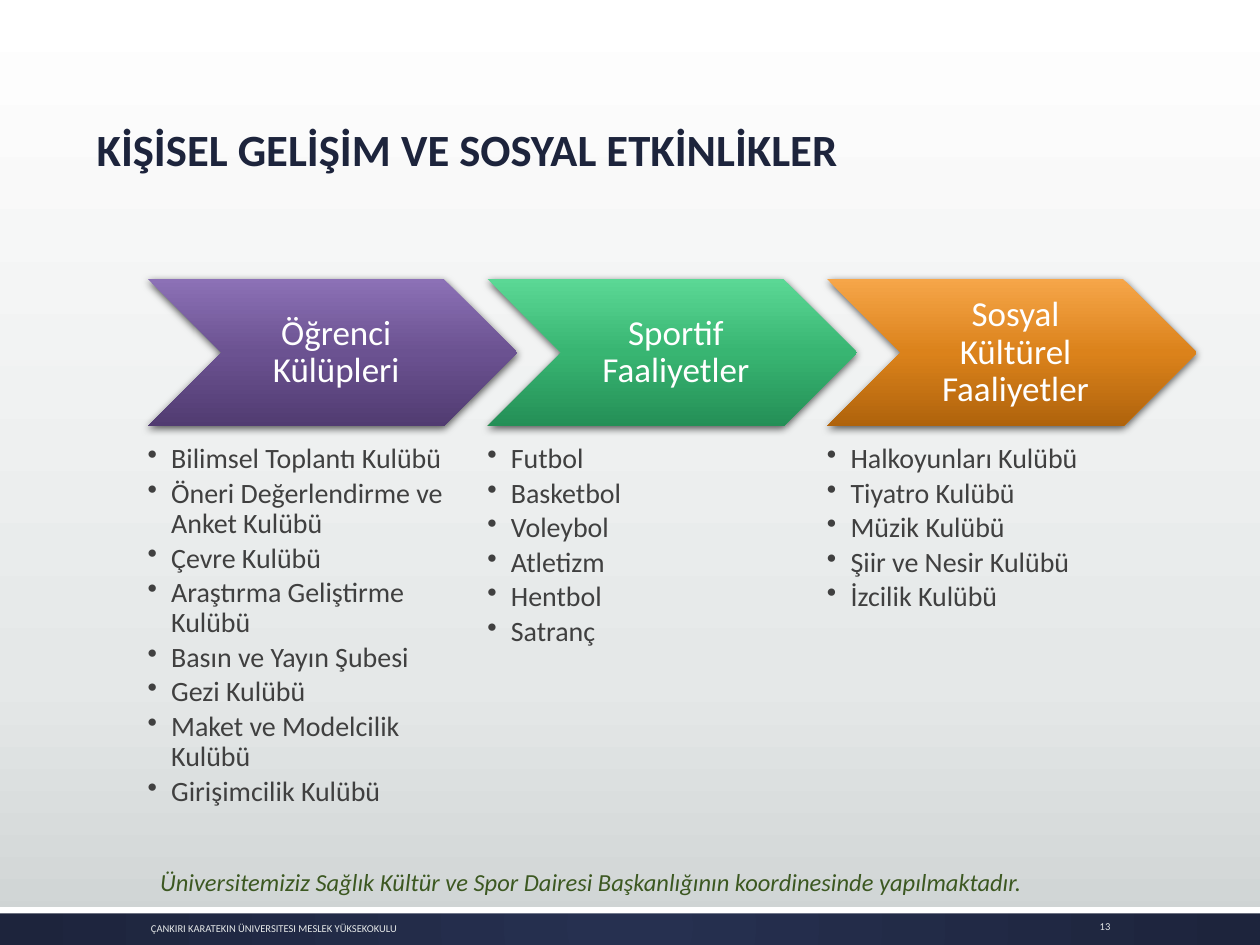
from dataclasses import dataclass

from lxml.etree import SubElement
from pptx import Presentation
from pptx.dml.color import RGBColor
from pptx.enum.shapes import MSO_SHAPE
from pptx.enum.text import MSO_ANCHOR, MSO_AUTO_SIZE, PP_ALIGN
from pptx.oxml import parse_xml
from pptx.oxml.ns import nsdecls, qn
from pptx.util import Pt

FONT = "Calibri"
COLORS = {
    "navy": "1D243C",
    "navy_light": "263050",
    "white": "FFFFFF",
    "pale": "E5E8E8",
    "gray": "CDD2D2",
    "body": "404040",
    "green": "3C5821",
}
LINEAR = '<a:lin ang="5400000" scaled="0"/>'
RADIAL = ('<a:path path="circle">'
          '<a:fillToRect l="50000" t="50000" r="50000" b="50000"/></a:path>')

COLUMN_LEFT, COLUMN_STEP = 84.4, 194.1
CHEVRON_TOP, CHEVRON_WIDTH, CHEVRON_HEIGHT = 159.3, 211.2, 84.4
LIST_TOP, LIST_WIDTH, LIST_HEIGHT = 254, 169, 217
BULLET_INDENT = 13.5


@dataclass
class Activity:
    heading: str
    gradient: tuple[str, str, str]
    items: list[str]


@dataclass
class TextStyle:
    size: float
    color: str
    bold: bool = False
    italic: bool = False
    align: PP_ALIGN = PP_ALIGN.LEFT
    line_spacing: float = 1.0
    space_after: float = 0


ACTIVITIES = [
    Activity("Öğrenci Külüpleri", ("8C71B6", "6B5291", "513B71"), [
        "Bilimsel Toplantı Kulübü", "Öneri Değerlendirme ve Anket Kulübü",
        "Çevre Kulübü", "Araştırma Geliştirme Kulübü",
        "Basın ve Yayın Şubesi", "Gezi Kulübü",
        "Maket ve Modelcilik Kulübü", "Girişimcilik Kulübü"]),
    Activity("Sportif Faaliyetler", ("5BD895", "38B572", "248F56"), [
        "Futbol", "Basketbol", "Voleybol", "Atletizm", "Hentbol", "Satranç"]),
    Activity("Sosyal Kültürel Faaliyetler", ("F6A649", "DB821B", "AF630C"), [
        "Halkoyunları Kulübü", "Tiyatro Kulübü", "Müzik Kulübü",
        "Şiir ve Nesir Kulübü", "İzcilik Kulübü"]),
]


def set_gradient(fill, element, stops: list[tuple[int, str]],
                 direction: str = LINEAR) -> None:
    """Swap a solid fill for a gradient with any number of stops."""
    fill.solid()
    solid = element.find(".//" + qn("a:solidFill"))
    stop_xml = "".join(
        f'<a:gs pos="{position * 1000}"><a:srgbClr val="{color}"/></a:gs>'
        for position, color in stops)
    gradient = parse_xml(f'<a:gradFill {nsdecls("a")} rotWithShape="1">'
                         f'<a:gsLst>{stop_xml}</a:gsLst>{direction}</a:gradFill>')
    solid.getparent().replace(solid, gradient)


def write_text(shape, lines: list[str], style: TextStyle,
               anchor: MSO_ANCHOR = MSO_ANCHOR.TOP,
               insets: tuple[float, ...] = (7.2, 3.6, 7.2, 3.6)) -> None:
    frame = shape.text_frame
    frame.text = "\n".join(lines)
    frame.word_wrap = True
    frame.auto_size = MSO_AUTO_SIZE.NONE
    frame.vertical_anchor = anchor
    (frame.margin_left, frame.margin_top,
     frame.margin_right, frame.margin_bottom) = map(Pt, insets)
    for paragraph in frame.paragraphs:
        paragraph.alignment = style.align
        paragraph.line_spacing = style.line_spacing
        paragraph.space_before = Pt(0)
        paragraph.space_after = Pt(style.space_after)
        font = paragraph.font
        font.name, font.size = FONT, Pt(style.size)
        font.bold, font.italic = style.bold, style.italic
        font.color.rgb = RGBColor.from_string(style.color)


def add_text(slide, left: float, top: float, width: float, height: float,
             lines: list[str], style: TextStyle, **options):
    box = slide.shapes.add_textbox(Pt(left), Pt(top), Pt(width), Pt(height))
    write_text(box, lines, style, **options)
    return box


def add_preset(slide, kind: MSO_SHAPE, left: float, top: float,
               width: float, height: float):
    shape = slide.shapes.add_shape(kind, Pt(left), Pt(top), Pt(width), Pt(height))
    shape.shadow.inherit = False
    shape.line.fill.background()
    return shape


def add_shadow(shape) -> None:
    effects = shape.element.spPr.find(qn("a:effectLst"))
    shadow = SubElement(effects, qn("a:outerShdw"), blurRad=str(Pt(4.5)),
                        dist=str(Pt(1.5)), dir="5400000", rotWithShape="0")
    color = SubElement(shadow, qn("a:srgbClr"), val="000000")
    SubElement(color, qn("a:alpha"), val="63000")


def add_bullets(shape) -> None:
    for paragraph in shape.text_frame.paragraphs:
        properties = paragraph._p.get_or_add_pPr()
        properties.set("marL", str(Pt(BULLET_INDENT)))
        properties.set("indent", str(-Pt(BULLET_INDENT)))
        SubElement(properties, qn("a:buChar"), char="•")
        # The bullet must come before the default run properties
        properties.append(properties.find(qn("a:defRPr")))


def add_activity(slide, column: int, activity: Activity) -> None:
    left = COLUMN_LEFT + column * COLUMN_STEP
    chevron = add_preset(slide, MSO_SHAPE.CHEVRON, left, CHEVRON_TOP,
                         CHEVRON_WIDTH, CHEVRON_HEIGHT)
    set_gradient(chevron.fill, chevron.element.spPr,
                 list(zip((0, 50, 100), activity.gradient)))
    add_shadow(chevron)
    write_text(chevron, [activity.heading],
               TextStyle(20, COLORS["white"], align=PP_ALIGN.CENTER, line_spacing=0.9),
               anchor=MSO_ANCHOR.MIDDLE, insets=(6.5, 2.2, 2.2, 2.2))
    items = add_text(slide, left, LIST_TOP, LIST_WIDTH, LIST_HEIGHT, activity.items,
                     TextStyle(16, COLORS["body"], line_spacing=0.9, space_after=2.5),
                     insets=(0, 0, 0, 0))
    add_bullets(items)


def main() -> None:
    presentation = Presentation()
    presentation.slide_width, presentation.slide_height = Pt(720), Pt(540)
    slide = presentation.slides.add_slide(presentation.slide_layouts[5])

    # Background and bottom band
    background = slide.background.fill
    set_gradient(background, slide.element.find(".//" + qn("p:bgPr")),
                 [(0, COLORS["white"]), (72, COLORS["pale"]), (100, COLORS["gray"])])
    band = add_preset(slide, MSO_SHAPE.RECTANGLE, 0, 518.4, 720, 21.6)
    set_gradient(band.fill, band.element.spPr,
                 [(0, COLORS["navy_light"]), (100, COLORS["navy"])], RADIAL)
    stripe = add_preset(slide, MSO_SHAPE.RECTANGLE, 0, 518.4, 720, 3.6)
    stripe.fill.solid()
    stripe.fill.fore_color.rgb = RGBColor.from_string(COLORS["white"])

    # Title
    title = slide.shapes.title
    title.left, title.top, title.width, title.height = map(Pt, (48, 36.7, 618, 67.7))
    write_text(title, ["KİŞİSEL GELİŞİM VE SOSYAL ETKİNLİKLER"],
               TextStyle(25.5, COLORS["navy"], bold=True, line_spacing=0.9),
               anchor=MSO_ANCHOR.BOTTOM)

    # Chevrons with their lists
    for column, activity in enumerate(ACTIVITIES):
        add_activity(slide, column, activity)

    # Note and footer
    add_text(slide, 84.4, 491.8, 630, 24.5,
             ["Üniversitemiziz Sağlık Kültür ve Spor Dairesi Başkanlığının "
              "koordinesinde yapılmaktadır."],
             TextStyle(14, COLORS["green"], italic=True))
    add_text(slide, 79.2, 521.3, 422.6, 18.7,
             ["ÇANKIRI KARATEKIN ÜNIVERSITESI MESLEK YÜKSEKOKULU"],
             TextStyle(6, COLORS["pale"]), anchor=MSO_ANCHOR.MIDDLE)
    add_text(slide, 603.4, 519.9, 38.2, 18.7, ["13"],
             TextStyle(6, COLORS["pale"], align=PP_ALIGN.RIGHT),
             anchor=MSO_ANCHOR.MIDDLE)

    presentation.save("out.pptx")


if __name__ == "__main__":
    main()
